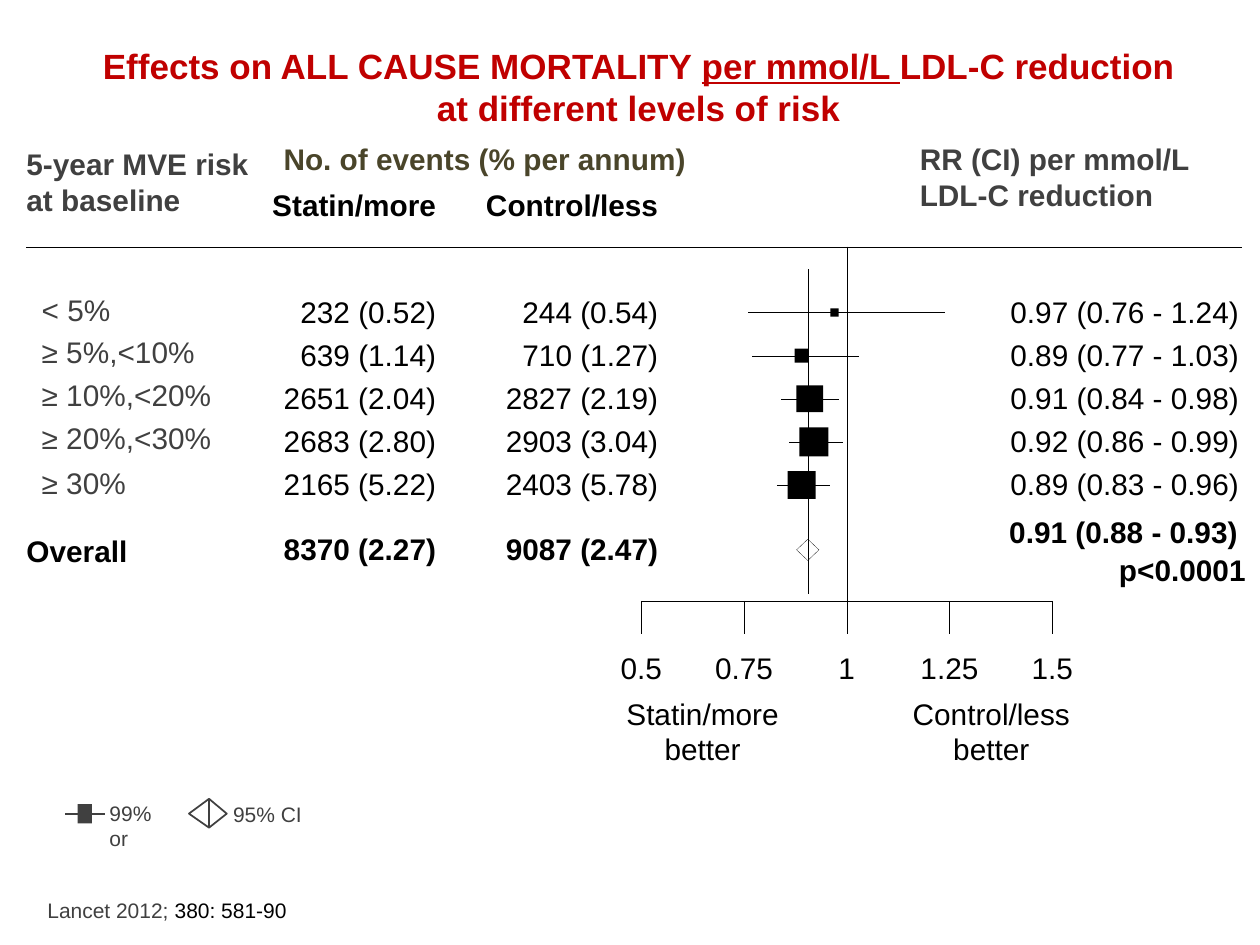
from itertools import pairwise

from lxml import etree
from pptx import Presentation
from pptx.dml.color import RGBColor
from pptx.enum.dml import MSO_LINE
from pptx.enum.shapes import MSO_CONNECTOR, MSO_SHAPE
from pptx.enum.text import PP_ALIGN
from pptx.oxml.ns import qn
from pptx.util import Pt

LEFT, CENTER, RIGHT = PP_ALIGN.LEFT, PP_ALIGN.CENTER, PP_ALIGN.RIGHT
STRAIGHT = MSO_CONNECTOR.STRAIGHT
RECTANGLE = MSO_SHAPE.RECTANGLE
DASH = MSO_LINE.SQUARE_DOT

COLORS = {"black": "000000", "gray": "404040", "olive": "4A452A", "red": "C00000"}
FONT = "Arial"
BODY, SMALL, TITLE = 17, 12, 20
HAIRLINE = 0.13

# Content: label, label top, statin events, control events, (ratio, low, high), marker size
GROUPS = [
    ("< 5%", 167, "232 (0.52)", "244 (0.54)", (0.97, 0.76, 1.24), 4.8),
    ("≥ 5%,<10%", 190.8, "639 (1.14)", "710 (1.27)", (0.89, 0.77, 1.03), 8),
    ("≥ 10%,<20%", 215.3, "2651 (2.04)", "2827 (2.19)", (0.91, 0.84, 0.98), 15.3),
    ("≥ 20%,<30%", 239.8, "2683 (2.80)", "2903 (3.04)", (0.92, 0.86, 0.99), 16.6),
    ("≥ 30%", 265.7, "2165 (5.22)", "2403 (5.78)", (0.89, 0.83, 0.96), 16),
]
TICKS = ["0.5", "0.75", "1", "1.25", "1.5"]
TITLE_LINES = [
    [("Effects on ALL CAUSE MORTALITY ", "red", False), ("per mmol/L ", "red", True),
     ("LDL-C reduction", "red", False)],
    [("at different levels of risk", "red", False)],
]
SOURCE = [[("Lancet 2012; ", "gray", False), ("380: 581-90", "black", False)]]

# Layout
LABEL_X, STATIN_RIGHT, CONTROL_RIGHT, RATIO_X = 23.8, 249.3, 376.2, 577.4
COLUMN_WIDTH, LINE_HEIGHT = 105, 21
FIRST_ROW_Y, ROW_PITCH, TEXT_RISE = 178.6, 24.65, 10.8
RULE_Y, AXIS_Y, TICK_END_Y = 141, 343.4, 362.2
AXIS_X, AXIS_UNIT = 366.5, 234.8
OVERALL_RATIO, OVERALL_Y = 0.905, 314.2


def ratio_x(ratio):
    return AXIS_X + (ratio - 0.5) * AXIS_UNIT


def rich_text(x, y, width, height, lines, size, bold=False, align=LEFT):
    frame = slide.shapes.add_textbox(Pt(x), Pt(y), Pt(width), Pt(height)).text_frame
    frame.margin_left = frame.margin_right = frame.margin_top = frame.margin_bottom = 0
    frame.word_wrap = True
    for index, line in enumerate(lines):
        paragraph = frame.add_paragraph() if index else frame.paragraphs[0]
        paragraph.alignment = align
        for text, color, underline in line:
            run = paragraph.add_run()
            run.text = text
            run.font.name = FONT
            run.font.size = Pt(size)
            run.font.bold = bold
            run.font.underline = underline
            run.font.color.rgb = RGBColor.from_string(COLORS[color])


def text(x, y, width, content, color="black", size=BODY, bold=False, align=LEFT):
    lines = [[(line, color, False)] for line in content.split("\n")]
    rich_text(x, y, width, LINE_HEIGHT * len(lines), lines, size, bold, align)


def column_text(right, y, content, bold=False):
    text(right - COLUMN_WIDTH, y, COLUMN_WIDTH, content, bold=bold, align=RIGHT)


def style_line(line, color, width):
    line.color.rgb = RGBColor.from_string(COLORS[color])
    line.width = Pt(width)


def connect(start, end, color="black", width=HAIRLINE):
    connector = slide.shapes.add_connector(STRAIGHT, *map(Pt, start + end))
    style_line(connector.line, color, width)
    etree.SubElement(connector._element.spPr, qn("a:effectLst"))
    return connector


def square(center_x, center_y, width, height, color="black"):
    shape = slide.shapes.add_shape(RECTANGLE, Pt(center_x - width / 2),
                                   Pt(center_y - height / 2), Pt(width), Pt(height))
    shape.shadow.inherit = False
    shape.fill.solid()
    shape.fill.fore_color.rgb = RGBColor.from_string(COLORS[color])
    shape.line.fill.background()


presentation = Presentation()
presentation.slide_width, presentation.slide_height = Pt(720), Pt(540)
slide = presentation.slides.add_slide(presentation.slide_layouts[6])

# Title and column headings
rich_text(48, 25.2, 634, 60, TITLE_LINES, TITLE, bold=True, align=CENTER)
text(15.1, 83.5, 140, "5-year MVE risk\nat baseline", "gray", bold=True)
text(162, 80.2, 245, "No. of events (% per annum)", "olive", bold=True)
text(525.6, 80.6, 175, "RR (CI) per mmol/L\nLDL-C reduction", "gray", bold=True)
column_text(STATIN_RIGHT, 106.6, "Statin/more", bold=True)
column_text(CONTROL_RIGHT, 106.6, "Control/less", bold=True)

# Rules and axis
connect((15.1, RULE_Y), (710, RULE_Y))
connect((ratio_x(1), RULE_Y), (ratio_x(1), 350.6))
connect((ratio_x(0.5), AXIS_Y), (ratio_x(1.5), AXIS_Y))
for tick in TICKS:
    x = ratio_x(float(tick))
    connect((x, AXIS_Y), (x, TICK_END_Y))
    text(x - 25, 371, 50, tick, align=CENTER)
text(351, 397.4, 101, "Statin/more\nbetter", align=CENTER)
text(516, 397.4, 101, "Control/less\nbetter", align=CENTER)

# Risk groups
for row, (label, label_y, statin, control, (ratio, low, high), size) in enumerate(GROUPS):
    y = FIRST_ROW_Y + row * ROW_PITCH
    text(LABEL_X, label_y, 120, label, "gray")
    column_text(STATIN_RIGHT, y - TEXT_RISE, statin)
    column_text(CONTROL_RIGHT, y - TEXT_RISE, control)
    text(RATIO_X, y - TEXT_RISE, 140, f"{ratio:.2f} ({low:.2f} - {high:.2f})")
    square(ratio_x(ratio), y, size, size)
    connect((ratio_x(low), y), (ratio_x(high), y))

# Overall result
text(15.1, 304.6, 80, "Overall", bold=True)
column_text(STATIN_RIGHT, 303, "8370 (2.27)", bold=True)
column_text(CONTROL_RIGHT, 303, "9087 (2.47)", bold=True)
text(576.7, 293.8, 140, "0.91 (0.88 - 0.93)", bold=True)
text(639.4, 315.4, 79, "p<0.0001", bold=True)
overall_x = ratio_x(OVERALL_RATIO)
diamond = [(overall_x - 6.4, OVERALL_Y), (overall_x, OVERALL_Y - 6.1),
           (overall_x + 6.4, OVERALL_Y), (overall_x, OVERALL_Y + 6.1)]
for start, end in pairwise(diamond + diamond[:1]):
    connect(start, end)
connect((overall_x, 154), (overall_x, 339.1)).line.dash_style = DASH

# Legend
square(48.4, 465, 8.2, 11, "gray")
connect((37.4, 465), (59.8, 465), "gray", 1)
text(62.6, 457.2, 36, "99% or", "gray", SMALL)
builder = slide.shapes.build_freeform(Pt(119.5), Pt(456.5))
builder.add_line_segments([(Pt(x), Pt(y)) for x, y in [(108, 465), (119.5, 473), (129.6, 465)]])
legend_diamond = builder.convert_to_shape()
legend_diamond.shadow.inherit = False
legend_diamond.fill.background()
style_line(legend_diamond.line, "gray", 1)
connect((119.5, 473), (119.5, 456.5), "gray", 1)
text(133.2, 458.2, 50, "95% CI", "gray", SMALL)

# Source
rich_text(27.1, 512.6, 180, 15, SOURCE, SMALL)

presentation.save("out.pptx")
